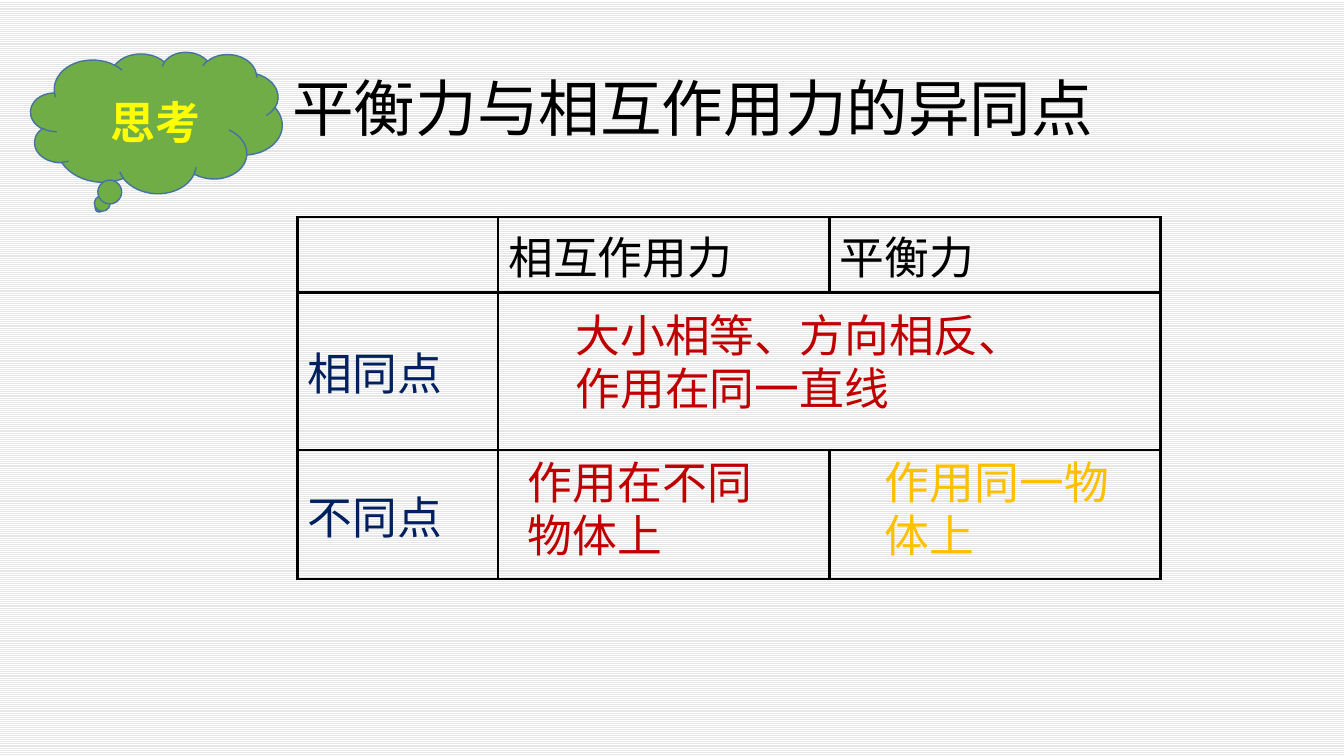
import pptx
import pptx.util
import pptx.dml.color
import pptx.enum.dml
import pptx.enum.shapes
import pptx.enum.text
import pptx.oxml.ns
import lxml.etree

Pt = pptx.util.Pt
RGBColor = pptx.dml.color.RGBColor
MSO_ANCHOR = pptx.enum.text.MSO_ANCHOR
qn = pptx.oxml.ns.qn

BLACK = RGBColor(0x00, 0x00, 0x00)
WHITE = RGBColor(0xFF, 0xFF, 0xFF)
GRAY = RGBColor(0xE7, 0xE6, 0xE6)
NAVY = RGBColor(0x00, 0x20, 0x60)
RED = RGBColor(0xC0, 0x00, 0x00)
GOLD = RGBColor(0xFF, 0xC0, 0x00)
YELLOW = RGBColor(0xFF, 0xFF, 0x00)
GREEN = RGBColor(0x70, 0xAD, 0x47)
BLUE = RGBColor(0x43, 0x73, 0x9E)
CJK = "Noto Sans CJK SC"


def write(tf, text, size, color, font=CJK, bold=False):
    """Fill a text frame with one left-aligned paragraph."""
    tf.text = text
    p = tf.paragraphs[0]
    p.alignment = pptx.enum.text.PP_ALIGN.LEFT
    p.font.size = Pt(size)
    p.font.bold = bold
    p.font.color.rgb = color
    p.font.name = font
    for r in p.runs:
        ea = lxml.etree.SubElement(r._r.get_or_add_rPr(), qn("a:ea"))
        ea.set("typeface", CJK)


def add_borders(cell):
    """Draw black 2 pt lines on all four sides of a cell."""
    tcPr = cell._tc.get_or_add_tcPr()
    for i, side in enumerate(("lnL", "lnR", "lnT", "lnB")):
        ln = lxml.etree.Element(qn("a:" + side), w=str(Pt(2)))
        fill = lxml.etree.SubElement(ln, qn("a:solidFill"))
        lxml.etree.SubElement(fill, qn("a:srgbClr"), val=str(BLACK))
        tcPr.insert(i, ln)


prs = pptx.Presentation()
prs.slide_width, prs.slide_height = Pt(960), Pt(540)
s = prs.slides.add_slide(prs.slide_layouts[5])

# Striped background
bg = s.background.fill
bg.patterned()
bg.pattern = pptx.enum.dml.MSO_PATTERN.LIGHT_HORIZONTAL
bg.fore_color.rgb = GRAY
bg.back_color.rgb = WHITE

# Title
title = s.shapes.title
title.left, title.top, title.width, title.height = Pt(201.6), Pt(46), Pt(667.5), Pt(60.5)
title.text_frame.vertical_anchor = MSO_ANCHOR.TOP
write(title.text_frame, "平衡力与相互作用力的异同点", 44, BLACK)

# Comparison table
table = s.shapes.add_table(3, 3, Pt(212.4), Pt(155), Pt(616.5), Pt(258.5)).table
table.first_row = table.horz_banding = False
for col, width in zip(table.columns, (143.5, 236.5, 236.5)):
    col.width = Pt(width)
for row, height in zip(table.rows, (54, 112.5, 92)):
    row.height = Pt(height)
for cell in table.iter_cells():
    cell.fill.background()
    cell.vertical_anchor = MSO_ANCHOR.MIDDLE
    add_borders(cell)
table.cell(1, 1).merge(table.cell(1, 2))
for row, col, text, color in (
    (0, 1, "相互作用力", BLACK),
    (0, 2, "平衡力", BLACK),
    (1, 0, "相同点", NAVY),
    (2, 0, "不同点", NAVY),
):
    write(table.cell(row, col).text_frame, text, 32, color)

# Answers laid over the table
for x, y, width, text, color in (
    (404, 216, 365, "大小相等、方向相反、作用在同一直线", RED),
    (370, 321, 202.5, "作用在不同物体上", RED),
    (625, 321, 179.5, "作用同一物体上", GOLD),
):
    tf = s.shapes.add_textbox(Pt(x), Pt(y), Pt(width), Pt(85)).text_frame
    tf.word_wrap = True
    write(tf, text, 32, color)

# Thought cloud with its label
cloud = s.shapes.add_shape(
    pptx.enum.shapes.MSO_SHAPE.CLOUD_CALLOUT, Pt(21.6), Pt(36), Pt(180), Pt(102))
cloud.rotation = 3
cloud.shadow.inherit = False
cloud.fill.solid()
cloud.fill.fore_color.rgb = GREEN
cloud.line.color.rgb = BLUE
cloud.line.width = Pt(1)
label = s.shapes.add_textbox(Pt(72), Pt(64), Pt(78.5), Pt(46)).text_frame
label.word_wrap = False
write(label, "思考", 32, YELLOW, "Calibri", True)

prs.save("out.pptx")
